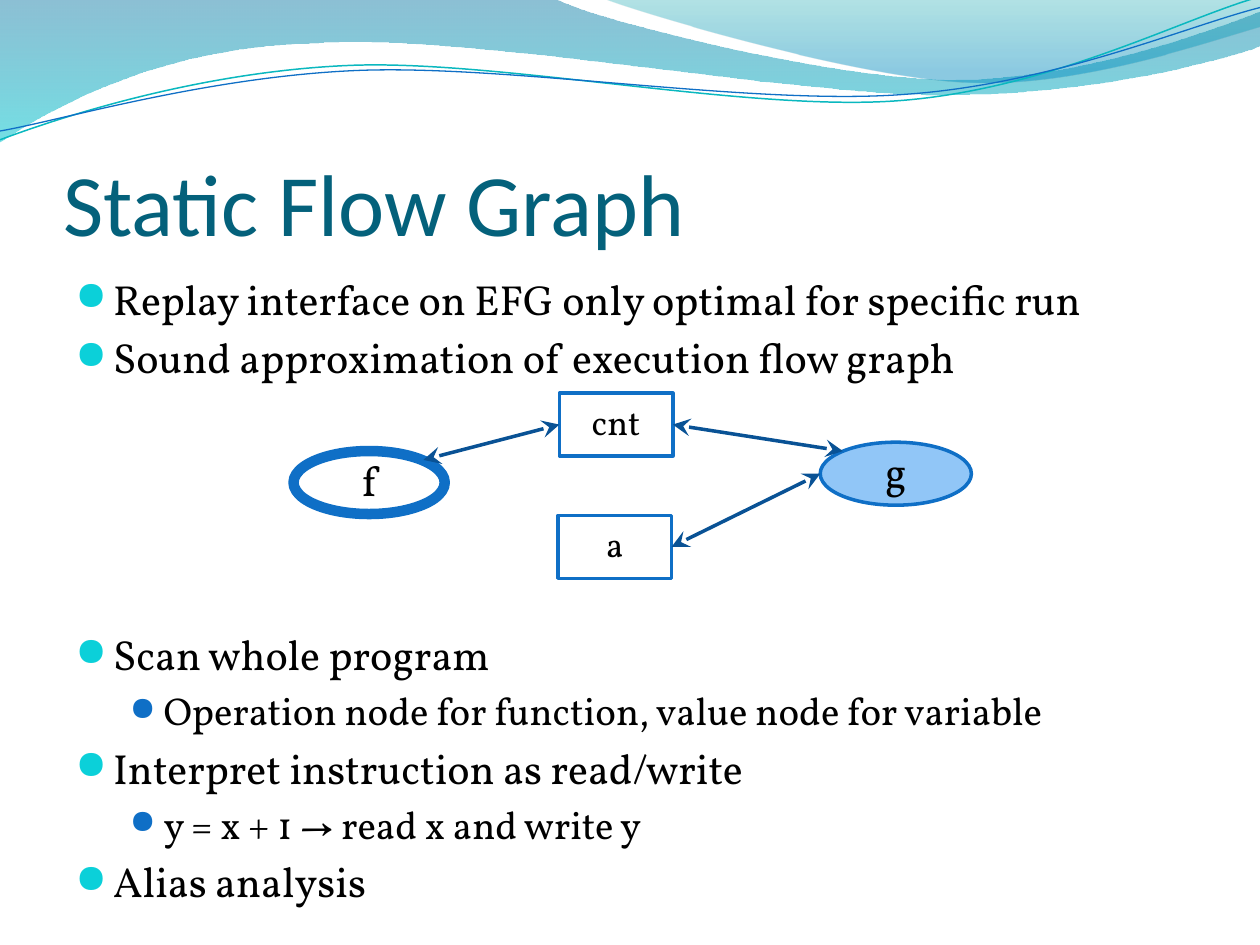
import dataclasses

import lxml.etree
import pptx
import pptx.dml.color
import pptx.enum.shapes
import pptx.enum.text
import pptx.oxml.ns
import pptx.util

Inches = pptx.util.Inches
Pt = pptx.util.Pt
RGBColor = pptx.dml.color.RGBColor
Anchor = pptx.enum.text.MSO_ANCHOR
Align = pptx.enum.text.PP_ALIGN
Shapes = pptx.enum.shapes.MSO_SHAPE
qn = pptx.oxml.ns.qn


@dataclasses.dataclass(frozen=True)
class Theme:
    heading_font: str = "Calibri"
    body_font: str = "Vollkorn"
    bullet_font: str = "OpenSymbol"
    title: str = "04617B"
    text: str = "000000"
    blue: str = "0F6FC6"
    bullet: str = "0BD0D9"
    teal: str = "0AB8BF"
    arrow: str = "095295"
    highlight: str = "91C6F7"
    title_size: float = 50
    level_sizes: tuple = (24, 22.2)
    operation_size: float = 24
    value_size: float = 20


theme = Theme()


def write_text(paragraph, text, size, font=theme.body_font, color=theme.text,
               align=Align.LEFT, space_before=0):
    paragraph.alignment = align
    paragraph.space_before = Pt(space_before)
    run = paragraph.add_run()
    run.text = text
    run.font.name = font
    run.font.size = Pt(size)
    run.font.color.rgb = RGBColor.from_string(color)


def add_wave(slide, start, segments, closed):
    points = [(Inches(x), Inches(y)) for segment in segments for x, y in segment]
    builder = slide.shapes.build_freeform(*map(Inches, start))
    builder.add_line_segments(points, close=closed)
    wave = builder.convert_to_shape()
    wave.shadow.inherit = False
    path_element = next(wave.element.iter(qn("a:path")))
    lines = iter(path_element.findall(qn("a:lnTo")))
    for segment in segments:
        pieces = [next(lines) for _ in segment]
        if len(pieces) == 3:
            curve = lxml.etree.Element(qn("a:cubicBezTo"))
            pieces[0].addprevious(curve)
            for piece in pieces:
                curve.append(piece[0])
                path_element.remove(piece)
    return wave


presentation = pptx.Presentation()
presentation.slide_width = Inches(10)
presentation.slide_height = Inches(7.5)
slide = presentation.slides.add_slide(presentation.slide_layouts[5])

filled_waves = [
    ((0, 0), [
        [(4.4, -0.01)],
        [(4.76, 0.17), (6.64, 0.63), (7.58, 0.63)],
        [(8.53, 0.63), (9.58, 0.26), (10, 0.09)],
        [(10.01, 0.36)],
        [(9.83, 0.44), (8.7, 0.76), (7.46, 0.75)],
        [(6.22, 0.75), (3.82, 0.28), (2.57, 0.34)],
        [(1.29, 0.36), (0.46, 0.83), (-0.01, 1.13)],
    ], [(0, "0074A1", 45), (1, "00C6CF", 55)]),
    ((4.79, -0.01), [
        [(5.09, 0.11), (6.82, 0.62), (7.69, 0.65)],
        [(8.56, 0.69), (9.61, 0.32), (10, 0.21)],
        [(10, 0)],
    ], [(0, "00A1A9", 30), (0.8, "008BBF", 45)]),
]
for start, segments, gradient in filled_waves:
    wave = add_wave(slide, start, segments, closed=True)
    wave.fill.gradient()
    wave.fill.gradient_angle = 270
    for stop, (position, color, opacity) in zip(wave.fill.gradient_stops, gradient):
        stop.position = position
        stop.color.rgb = RGBColor.from_string(color)
    for color_element, (_, _, opacity) in zip(wave.element.spPr.iter(qn("a:srgbClr")), gradient):
        lxml.etree.SubElement(color_element, qn("a:alpha"), val=str(opacity * 1000))
    wave.line.fill.background()

line_waves = [
    ((0, 1.11), [
        [(0.48, 0.93), (1.58, 0.57), (2.77, 0.52)],
        [(3.95, 0.47), (5.93, 0.89), (7.13, 0.8)],
        [(8.33, 0.71), (9.38, 0.15), (9.98, -0.02)],
    ], theme.teal, 0.85),
    ((0, 1.04), [
        [(0.47, 0.96), (1.64, 0.61), (2.83, 0.56)],
        [(4.03, 0.51), (5.97, 0.84), (7.17, 0.75)],
        [(8.36, 0.67), (9.41, 0.21), (10, 0.06)],
    ], theme.blue, 0.75),
]
for start, segments, color, width in line_waves:
    wave = add_wave(slide, start, segments, closed=False)
    wave.fill.background()
    wave.line.color.rgb = RGBColor.from_string(color)
    wave.line.width = Pt(width)

title = slide.shapes.title
title.left, title.top, title.width, title.height = map(Inches, (0.5, 0.77, 9, 1.25))
frame = title.text_frame
frame.vertical_anchor = Anchor.BOTTOM
frame.margin_left = frame.margin_right = frame.margin_bottom = 0
frame.margin_top = Inches(0.05)
write_text(frame.paragraphs[0], "Static Flow Graph", theme.title_size,
           font=theme.heading_font, color=theme.title)

line_gap = 4.7
graph_gap = 140.7
bullets = [
    (0, "Replay interface on EFG only optimal for specific run", 0),
    (0, "Sound approximation of execution flow graph", line_gap),
    (0, "Scan whole program", graph_gap),
    (1, "Operation node for function, value node for variable", line_gap),
    (0, "Interpret instruction as read/write", line_gap),
    (1, "y = x + 1 → read x and write y", line_gap),
    (0, "Alias analysis", line_gap),
]
bullet_levels = [(0.3, 0.3, theme.bullet, 95), (0.7, 0.27, theme.blue, 85)]
body = slide.shapes.add_textbox(Inches(0.5), Inches(2.12), Inches(9), Inches(4.8))
frame = body.text_frame
frame.word_wrap = True
for index, (level, text, gap) in enumerate(bullets):
    paragraph = frame.add_paragraph() if index else frame.paragraphs[0]
    paragraph.level = level
    write_text(paragraph, text, theme.level_sizes[level], space_before=gap)
    margin, hanging, color, scale = bullet_levels[level]
    properties = paragraph._p.get_or_add_pPr()
    properties.set("marL", str(Inches(margin)))
    properties.set("indent", str(-Inches(hanging)))
    bullet_color = lxml.etree.SubElement(properties, qn("a:buClr"))
    lxml.etree.SubElement(bullet_color, qn("a:srgbClr"), val=color)
    lxml.etree.SubElement(properties, qn("a:buSzPct"), val=str(scale * 1000))
    lxml.etree.SubElement(properties, qn("a:buFont"), typeface=theme.bullet_font)
    lxml.etree.SubElement(properties, qn("a:buChar"), char="●")

nodes = {}
for name, kind, left, top, width, size, fill, line_width in [
    ("f", Shapes.OVAL, 2.33, 3.58, 1.2, theme.operation_size, None, 6),
    ("cnt", Shapes.RECTANGLE, 4.44, 3.12, 0.9, theme.value_size, None, 2),
    ("a", Shapes.RECTANGLE, 4.43, 4.09, 0.9, theme.value_size, None, 2),
    ("g", Shapes.OVAL, 6.51, 3.51, 1.2, theme.operation_size, theme.highlight, 2),
]:
    node = slide.shapes.add_shape(kind, Inches(left), Inches(top), Inches(width), Inches(0.5))
    node.shadow.inherit = False
    if fill:
        node.fill.solid()
        node.fill.fore_color.rgb = RGBColor.from_string(fill)
    else:
        node.fill.background()
    node.line.color.rgb = RGBColor.from_string(theme.blue)
    node.line.width = Pt(line_width)
    frame = node.text_frame
    frame.vertical_anchor = Anchor.MIDDLE
    frame.margin_top = 0
    frame.margin_bottom = Inches(0.05)
    write_text(frame.paragraphs[0], name, size, align=Align.CENTER)
    nodes[name] = node

left_side, right_side = 1, 3
for start, end, value_name, side in [
    ((3.36, 3.65), (4.44, 3.37), "cnt", left_side),
    ((6.51, 3.76), (5.33, 4.34), "a", right_side),
    ((6.69, 3.58), (5.34, 3.37), "cnt", right_side),
]:
    arrow = slide.shapes.add_connector(pptx.enum.shapes.MSO_CONNECTOR.STRAIGHT,
                                       *map(Inches, start + end))
    arrow.end_connect(nodes[value_name], side)
    arrow.line.color.rgb = RGBColor.from_string(theme.arrow)
    arrow.line.width = Pt(2)
    line_element = arrow.line._get_or_add_ln()
    for tip in ("a:headEnd", "a:tailEnd"):
        lxml.etree.SubElement(line_element, qn(tip), type="stealth", w="lg", len="lg")
    lxml.etree.SubElement(arrow._element.spPr, qn("a:effectLst"))

presentation.save("out.pptx")
